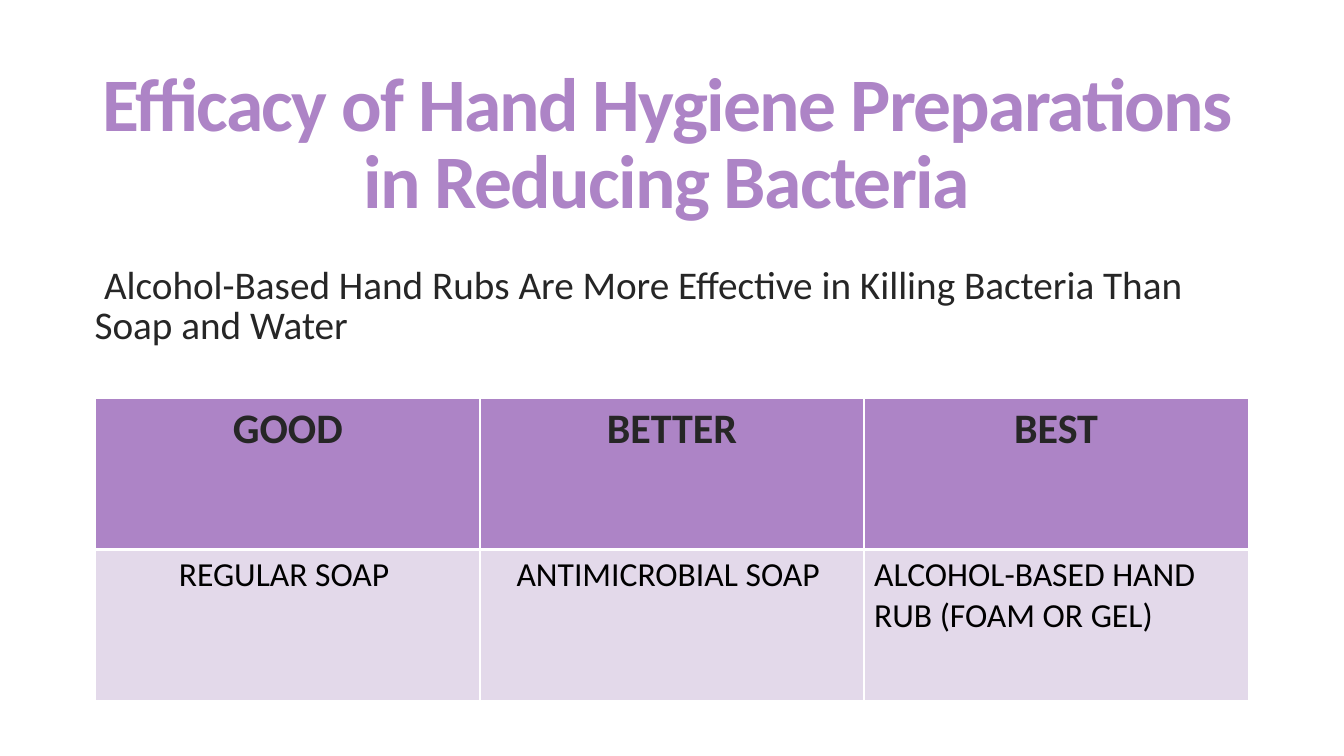
"""Build the hand hygiene efficacy slide."""
from dataclasses import dataclass

from lxml import etree
from pptx import Presentation
from pptx.dml.color import RGBColor
from pptx.enum.text import MSO_ANCHOR, PP_ALIGN
from pptx.oxml.ns import qn
from pptx.util import Inches, Pt

LEFT, CENTER = PP_ALIGN.LEFT, PP_ALIGN.CENTER
TOP, MIDDLE = MSO_ANCHOR.TOP, MSO_ANCHOR.MIDDLE
PURPLE = RGBColor(0xAD, 0x84, 0xC6)
LILAC = RGBColor(0xE3, 0xD9, 0xEA)
CHARCOAL = RGBColor(0x26, 0x26, 0x26)
BLACK = RGBColor(0x00, 0x00, 0x00)
WHITE = RGBColor(0xFF, 0xFF, 0xFF)
FONT = "Calibri"
SLIDE_W, SLIDE_H = Inches(13.33), Inches(7.5)
COLUMN_W, ROW_H = Inches(3.81), Inches(1.5)


@dataclass(frozen=True)
class Style:
    """Look of a run of text."""
    size: float
    color: RGBColor
    bold: bool = False
    spacing: float = 0


@dataclass(frozen=True)
class TextBlock:
    """Text box placed by inches on the slide."""
    text: str
    left: float
    top: float
    width: float
    height: float
    style: Style
    align: PP_ALIGN = LEFT
    anchor: MSO_ANCHOR = TOP
    hanging: float = 0


@dataclass(frozen=True)
class Row:
    """Table row with one look and one entry per column."""
    texts: tuple[str, ...]
    aligns: tuple[PP_ALIGN, ...]
    style: Style
    fill: RGBColor
    borders: dict[str, float]


BLOCKS = (
    TextBlock("Efficacy of Hand Hygiene Preparations in Reducing Bacteria",
              0.72, 0.55, 11.78, 1.81, Style(54, PURPLE, True, -1.2), CENTER, MIDDLE),
    TextBlock("Alcohol-Based Hand Rubs Are More Effective in Killing Bacteria Than Soap and Water",
              0.74, 2.6, 11.76, 1.15, Style(28, CHARCOAL), hanging=0.1),
)
ROWS = (
    Row(("GOOD", "BETTER", "BEST"), (CENTER,) * 3, Style(30, CHARCOAL, True),
        PURPLE, {"L": 1, "R": 1, "T": 1, "B": 3}),
    Row(("REGULAR SOAP ", "ANTIMICROBIAL SOAP ", "ALCOHOL-BASED HAND RUB (FOAM OR GEL)"),
        (CENTER, CENTER, LEFT), Style(24, BLACK),
        LILAC, {"L": 1, "R": 1, "T": 3, "B": 1}),
)


def add_run(p, text: str, style: Style) -> None:
    """Append one styled run to a paragraph."""
    r = p.add_run()
    r.text = text
    r.font.name, r.font.size, r.font.bold = FONT, Pt(style.size), style.bold
    r.font.color.rgb = style.color
    if style.spacing:
        r.font._element.set("spc", str(round(style.spacing * 100)))


def add_block(s, block: TextBlock) -> None:
    """Draw a text block on the slide."""
    sp = s.shapes.add_textbox(*map(Inches, (block.left, block.top, block.width, block.height)))
    tf = sp.text_frame
    tf.word_wrap, tf.vertical_anchor = True, block.anchor
    p = tf.paragraphs[0]
    p.alignment, p.line_spacing = block.align, 0.85
    if block.hanging:
        pPr = p._p.get_or_add_pPr()
        pPr.set("marL", str(Inches(block.hanging)))
        pPr.set("indent", str(-Inches(block.hanging)))
        etree.SubElement(pPr, qn("a:buChar")).set("char", " ")
    add_run(p, block.text, block.style)


def add_borders(cell, borders: dict[str, float]) -> None:
    """Give a cell white borders of the listed widths."""
    tcPr = cell._tc.get_or_add_tcPr()
    for side, width in borders.items():
        ln = etree.SubElement(tcPr, qn(f"a:ln{side}"), w=str(Pt(width)))
        fill = etree.SubElement(ln, qn("a:solidFill"))
        etree.SubElement(fill, qn("a:srgbClr"), val=str(WHITE))


def add_comparison(s, rows: tuple[Row, ...]) -> None:
    """Draw the comparison table."""
    count = len(rows[0].texts)
    table = s.shapes.add_table(len(rows), count, Inches(0.95), Inches(3.95),
                               COLUMN_W * count, ROW_H * len(rows)).table
    for i, row in enumerate(rows):
        for j, (text, align) in enumerate(zip(row.texts, row.aligns)):
            cell = table.cell(i, j)
            add_borders(cell, row.borders)
            cell.fill.solid()
            cell.fill.fore_color.rgb = row.fill
            p = cell.text_frame.paragraphs[0]
            p.alignment = align
            add_run(p, text, row.style)


def main() -> None:
    """Build and save the presentation."""
    prs = Presentation()
    prs.slide_width, prs.slide_height = SLIDE_W, SLIDE_H
    s = prs.slides.add_slide(prs.slide_layouts[6])
    for block in BLOCKS:
        add_block(s, block)
    add_comparison(s, ROWS)
    prs.save("out.pptx")


if __name__ == "__main__":
    main()
